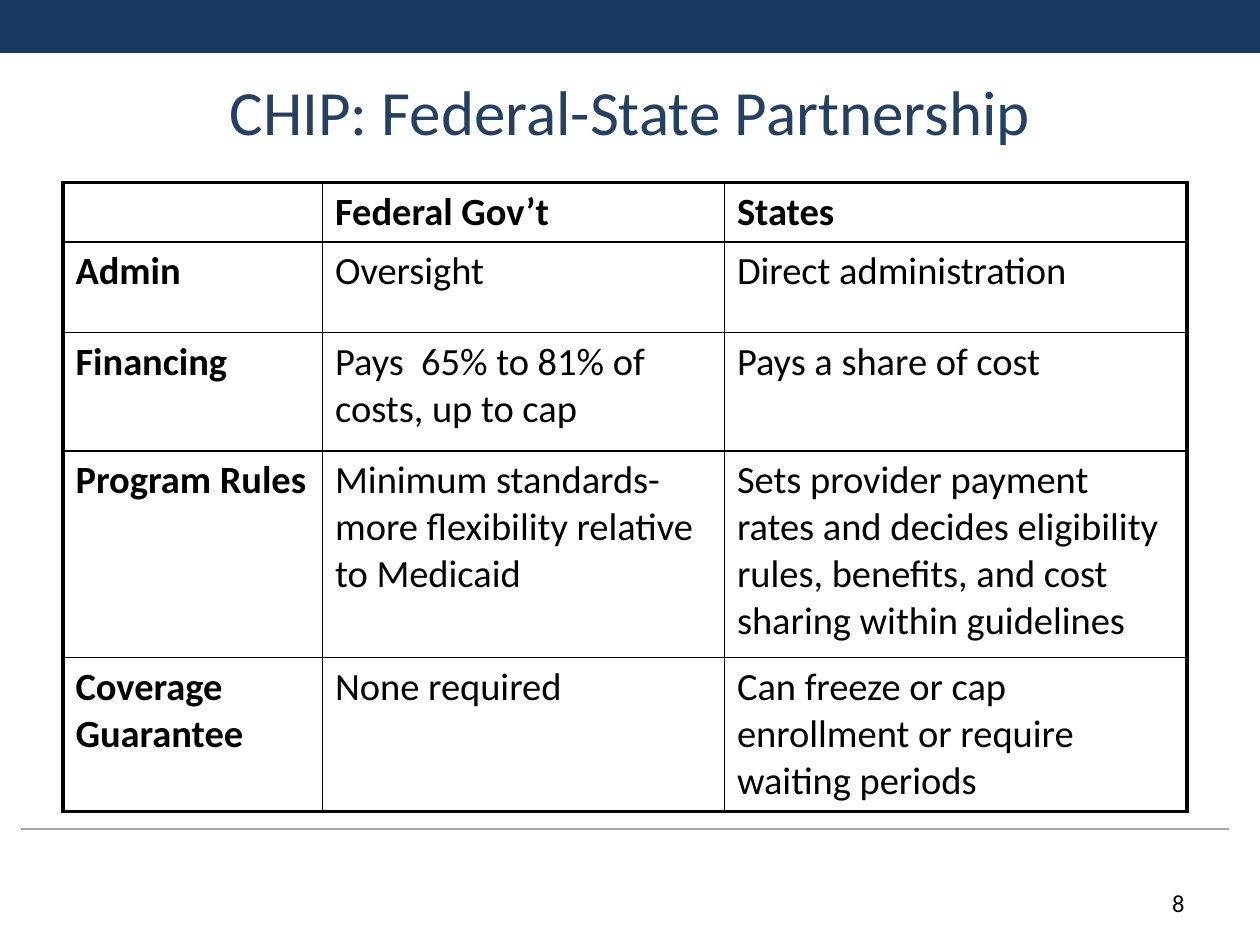
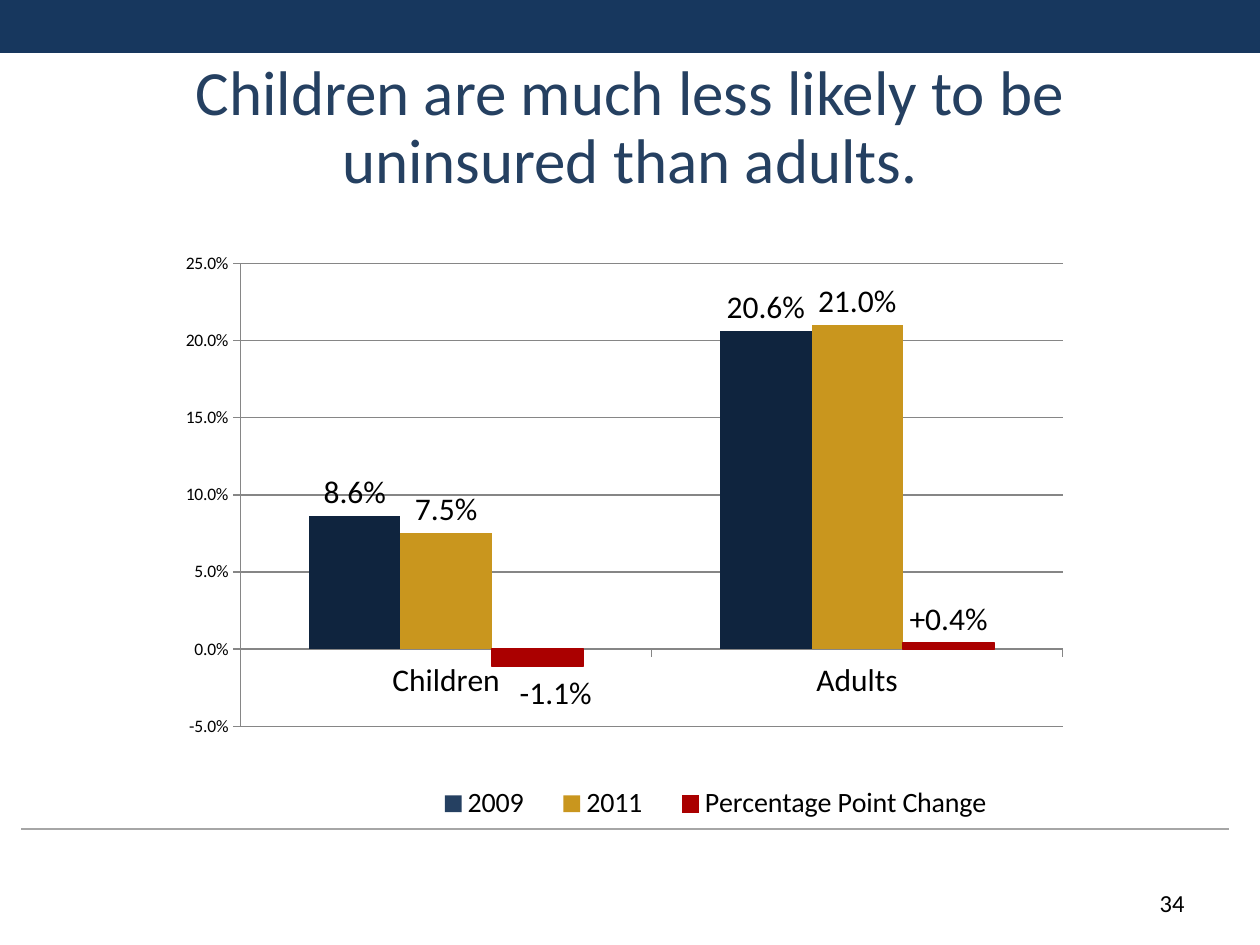
"""Two slides on CHIP: a federal and state comparison table and an uninsured rate chart."""
from lxml import etree
from pptx import Presentation
from pptx.chart.data import CategoryChartData
from pptx.dml.color import RGBColor
from pptx.enum import chart as ch, shapes, text
from pptx.oxml.ns import qn
from pptx.util import Inches, Pt

FONT = "Calibri"
COLORS = {
    "band": "17375E", "title": "254061", "rule": "A6A6A6", "text": "000000",
    "grid": "868686", "navy": "254061", "dark navy": "0F243E", "gold": "C9961E", "red": "AA0000",
}

PARTNERSHIP = {
    "title": "CHIP: Federal-State Partnership",
    "title_box": (0.75, 0.25, 8.5, 1.25),
    "page": "8",
    "table_box": (0.5, 1.45, 8.92, 4.97),
    "columns": (2.06, 3.19, 3.67),
    "row_heights": (0.47, 0.72, 0.94, 1.64, 1.22),
    "rows": [
        ("", "Federal Gov’t", "States"),
        ("Admin", "Oversight", "Direct administration"),
        ("Financing", "Pays  65% to 81% of costs, up to cap", "Pays a share of cost"),
        ("Program Rules", "Minimum standards- more flexibility relative to Medicaid",
         "Sets provider payment rates and decides eligibility rules, benefits, "
         "and cost sharing within guidelines"),
        ("Coverage Guarantee", "None required",
         "Can freeze or cap enrollment or require waiting periods"),
    ],
}

UNINSURED = {
    "title": "Children are much less likely to be uninsured than adults.",
    "title_box": (0.5, 0.5, 9, 1.05),
    "page": "34",
    "chart_box": (1.33, 1.92, 7.25, 4.77),
    "groups": ("Children", "Adults"),
    "series": [
        ("2009", (0.086, 0.206), "navy"),
        ("2011", (0.075, 0.21), "gold"),
        ("Percentage Point Change", (-0.011, 0.004), "red"),
    ],
    "rise": "+0.4%",
}


def rgb(name):
    return RGBColor.from_string(COLORS[name])


def style(font, size, color="text", bold=False):
    font.name, font.size, font.bold = FONT, Pt(size), bold
    font.color.rgb = rgb(color)


def add_run(paragraph, words, size, color="text", bold=False):
    run = paragraph.add_run()
    run.text = words
    style(run.font, size, color, bold)


def add_text(slide, box, words, size, color, align, anchor, spacing=None):
    frame = slide.shapes.add_textbox(*map(Inches, box)).text_frame
    frame.word_wrap = True
    frame.vertical_anchor = anchor
    paragraph = frame.paragraphs[0]
    paragraph.alignment = align
    paragraph.line_spacing = spacing
    add_run(paragraph, words, size, color)


def add_frame(deck, content, spacing=None):
    slide = deck.slides.add_slide(deck.slide_layouts[6])
    band = slide.shapes.add_shape(shapes.MSO_SHAPE.RECTANGLE, 0, 0, Inches(10), Inches(0.42))
    band.shadow.inherit = False
    band.fill.solid()
    band.fill.fore_color.rgb = rgb("band")
    band.line.fill.background()
    rule = slide.shapes.add_connector(
        shapes.MSO_CONNECTOR.STRAIGHT, *map(Inches, (0.17, 6.58, 9.75, 6.58)))
    rule.line.color.rgb = rgb("rule")
    rule.line.width = Pt(0.75)
    etree.SubElement(rule._element.spPr, qn("a:effectLst"))
    add_text(slide, content["title_box"], content["title"], 36, "title",
             text.PP_ALIGN.CENTER, text.MSO_ANCHOR.MIDDLE, spacing)
    add_text(slide, (7.17, 7, 2.33, 0.4), content["page"], 14, "text",
             text.PP_ALIGN.RIGHT, text.MSO_ANCHOR.TOP)
    return slide


def set_borders(cell, outer_edges):
    properties = cell._tc.get_or_add_tcPr()
    for index, (side, outer) in enumerate(zip(("lnL", "lnR", "lnT", "lnB"), outer_edges)):
        line = etree.Element(qn(f"a:{side}"), w=str(Pt(2.25 if outer else 1)))
        fill = etree.SubElement(line, qn("a:solidFill"))
        etree.SubElement(fill, qn("a:srgbClr"), val=COLORS["text"])
        properties.insert(index, line)


def add_partnership_table(slide, content):
    rows, columns = content["rows"], content["columns"]
    table = slide.shapes.add_table(
        len(rows), len(columns), *map(Inches, content["table_box"])).table
    table.first_row = table.horz_banding = False
    for column, width in zip(table.columns, columns):
        column.width = Inches(width)
    for r, (row, height) in enumerate(zip(rows, content["row_heights"])):
        table.rows[r].height = Inches(height)
        for c, words in enumerate(row):
            cell = table.cell(r, c)
            cell.fill.background()
            set_borders(cell, (c == 0, c == len(columns) - 1, r == 0, r == len(rows) - 1))
            if words:
                add_run(cell.text_frame.paragraphs[0], words, 22, bold=r == 0 or c == 0)


def make_layout(inner=False, **places):
    layout = etree.Element(qn("c:layout"))
    manual = etree.SubElement(layout, qn("c:manualLayout"))
    if inner:
        etree.SubElement(manual, qn("c:layoutTarget"), val="inner")
    if "w" in places:
        for side in "xy":
            etree.SubElement(manual, qn(f"c:{side}Mode"), val="edge")
    for side, share in places.items():
        etree.SubElement(manual, qn(f"c:{side}"), val=str(share))
    return layout


def place_plot(chart):
    plot_area = chart._chartSpace.chart.plotArea
    for layout in plot_area.findall(qn("c:layout")):
        plot_area.remove(layout)
    plot_area.insert(0, make_layout(inner=True, x=0.08, y=0.036, w=0.9, h=0.77))


def add_legend(chart):
    chart.has_legend = True
    legend = chart.legend
    legend.position = ch.XL_LEGEND_POSITION.BOTTOM
    legend.include_in_layout = False
    style(legend.font, 16)
    element = legend._element
    for layout in element.findall(qn("c:layout")):
        element.remove(layout)
    element.find(qn("c:legendPos")).addnext(make_layout(x=0.27, y=0.87, w=0.66, h=0.14))


def style_axes(chart):
    values, groups = chart.value_axis, chart.category_axis
    values.minimum_scale, values.maximum_scale, values.major_unit = -0.05, 0.25, 0.05
    values.tick_labels.number_format = "0.0%"
    values.tick_labels.number_format_is_linked = False
    values.major_gridlines.format.line.color.rgb = rgb("grid")
    for axis, size in ((values, 10), (groups, 18)):
        axis.major_tick_mark = ch.XL_TICK_MARK.OUTSIDE
        axis.format.line.color.rgb = rgb("grid")
        style(axis.tick_labels.font, size)


def add_uninsured_chart(slide, content):
    rates = CategoryChartData(number_format="0.0%")
    rates.categories = content["groups"]
    for name, shares, _ in content["series"]:
        rates.add_series(name, shares)
    chart = slide.shapes.add_chart(
        ch.XL_CHART_TYPE.COLUMN_CLUSTERED, *map(Inches, content["chart_box"]), rates).chart
    chart.has_title = False
    style(chart.font, 10)
    plot = chart.plots[0]
    plot.gap_width, plot.overlap, plot.vary_by_categories = 150, 0, False
    for series, (_, _, color) in zip(plot.series, content["series"]):
        series.invert_if_negative = False
        series.format.fill.solid()
        series.format.fill.fore_color.rgb = rgb(color)
        labels = series.data_labels
        labels.show_value = True
        labels.number_format, labels.number_format_is_linked = "0.0%", False
        labels.position = ch.XL_LABEL_POSITION.OUTSIDE_END
        style(labels.font, 18)
    before, _, change = plot.series
    for index in range(len(content["groups"])):
        fill = before.points[index].format.fill
        fill.solid()
        fill.fore_color.rgb = rgb("dark navy")
    change.format.line.color.rgb = rgb("red")
    change.format.line.width = Pt(0.75)
    drop, rise = (change.points[index].data_label for index in range(2))
    style(drop.font, 18)
    drop.position = ch.XL_LABEL_POSITION.OUTSIDE_END
    drop_label = change.data_labels._element.find(qn("c:dLbl"))
    drop_label.find(qn("c:idx")).addnext(make_layout(x=0.02, y=0.005))
    add_run(rise.text_frame.paragraphs[0], content["rise"], 18)
    rise.position = ch.XL_LABEL_POSITION.OUTSIDE_END
    style_axes(chart)
    place_plot(chart)
    add_legend(chart)


def main():
    deck = Presentation()
    deck.slide_width, deck.slide_height = Inches(10), Inches(7.5)
    add_partnership_table(add_frame(deck, PARTNERSHIP), PARTNERSHIP)
    add_uninsured_chart(add_frame(deck, UNINSURED, spacing=0.9), UNINSURED)
    deck.save("out.pptx")


if __name__ == "__main__":
    main()
